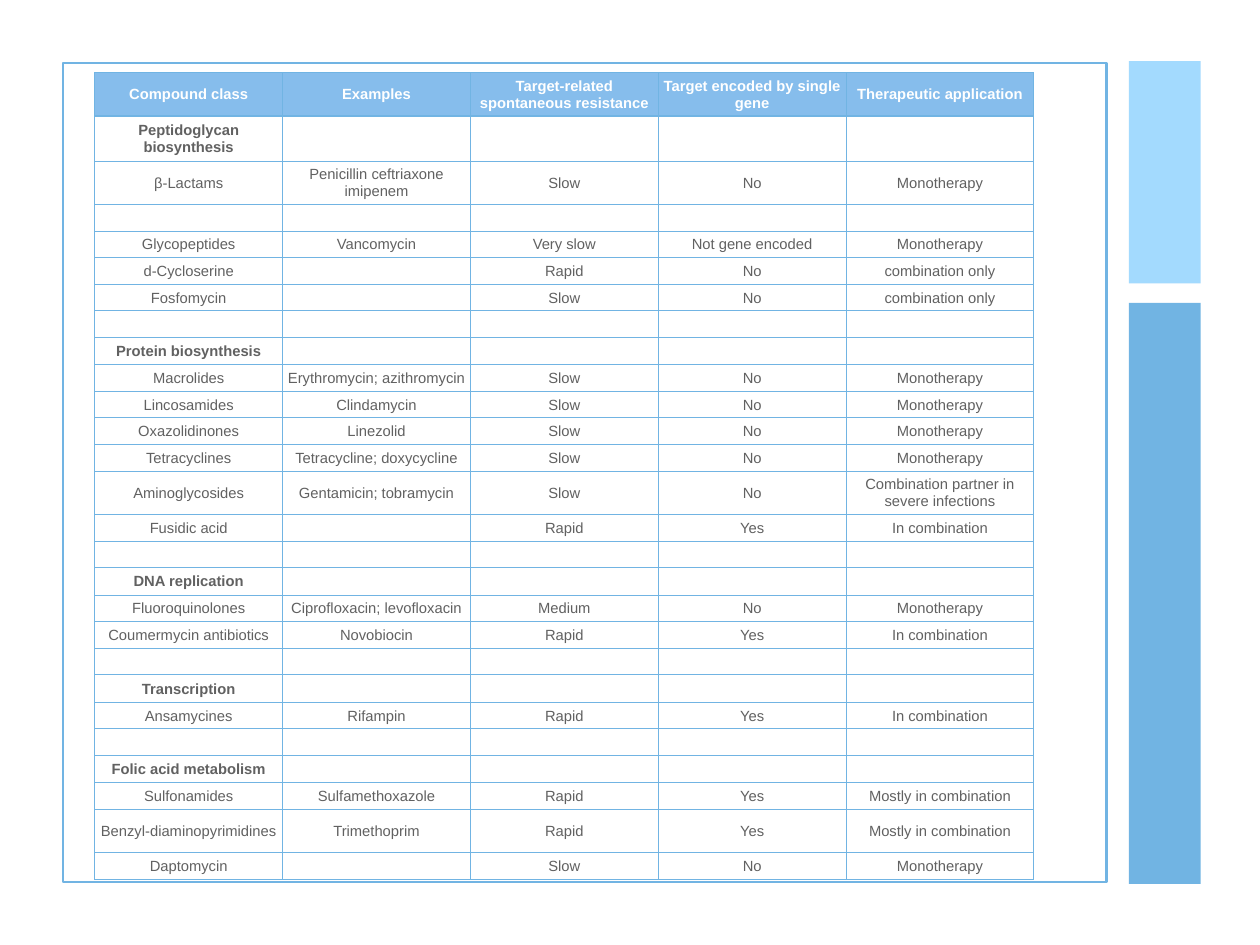
from dataclasses import dataclass

from lxml.etree import SubElement
from pptx import Presentation
from pptx.dml.color import RGBColor
from pptx.enum.shapes import MSO_SHAPE
from pptx.enum.text import MSO_ANCHOR, PP_ALIGN
from pptx.oxml.ns import qn
from pptx.util import Inches, Pt


@dataclass(frozen=True)
class Theme:
    font: str = "Arial"
    size: int = 12
    line_spacing: int = 14
    accent: str = "71B4E3"
    pale: str = "A3DAFE"
    header: str = "86BDEC"
    header_text: str = "FFFFFF"
    text: str = "616161"
    frame_width: int = 2
    border_width: int = 1


THEME = Theme()
COLUMN_WIDTH = 2.12
ROW_HEIGHT = 0.3
TITLE_HEIGHT = 0.31
TWO_LINE_HEIGHT = 0.49
TWO_LINE_TITLE_HEIGHT = 0.51

HEADINGS = ("Compound class", "Examples", "Target-related spontaneous resistance",
            "Target encoded by single gene", "Therapeutic application")
SPACER = ("",) * len(HEADINGS)
SECTIONS = {
    "Peptidoglycan biosynthesis": [
        ("β-Lactams", "Penicillin ceftriaxone imipenem", "Slow", "No", "Monotherapy"),
        SPACER,
        ("Glycopeptides", "Vancomycin", "Very slow", "Not gene encoded", "Monotherapy"),
        ("d-Cycloserine", "", "Rapid", "No", "combination only"),
        ("Fosfomycin", "", "Slow", "No", "combination only"),
    ],
    "Protein biosynthesis": [
        ("Macrolides", "Erythromycin; azithromycin", "Slow", "No", "Monotherapy"),
        ("Lincosamides", "Clindamycin", "Slow", "No", "Monotherapy"),
        ("Oxazolidinones", "Linezolid", "Slow", "No", "Monotherapy"),
        ("Tetracyclines", "Tetracycline; doxycycline", "Slow", "No", "Monotherapy"),
        ("Aminoglycosides", "Gentamicin; tobramycin", "Slow", "No",
         "Combination partner in severe infections"),
        ("Fusidic acid", "", "Rapid", "Yes", "In combination"),
    ],
    "DNA replication": [
        ("Fluoroquinolones", "Ciprofloxacin; levofloxacin", "Medium", "No", "Monotherapy"),
        ("Coumermycin antibiotics", "Novobiocin", "Rapid", "Yes", "In combination"),
    ],
    "Transcription": [
        ("Ansamycines", "Rifampin", "Rapid", "Yes", "In combination"),
    ],
    "Folic acid metabolism": [
        ("Sulfonamides", "Sulfamethoxazole", "Rapid", "Yes", "Mostly in combination"),
        ("Benzyl-diaminopyrimidines", "Trimethoprim", "Rapid", "Yes", "Mostly in combination"),
        ("Daptomycin", "", "Slow", "No", "Monotherapy"),
    ],
}
TWO_LINE_ROWS = {"Compound class", "β-Lactams", "Aminoglycosides", "Benzyl-diaminopyrimidines"}


def color(value):
    return RGBColor.from_string(value)


def write_text(frame, text, *, bold=False, text_color=THEME.text):
    para = frame.paragraphs[0]
    para.alignment = PP_ALIGN.CENTER
    para.line_spacing = Pt(THEME.line_spacing)
    if not text:
        SubElement(para._p, qn("a:endParaRPr"), sz=str(THEME.size * 100))
        return
    span = para.add_run()
    span.text = text
    span.font.name = THEME.font
    span.font.size = Pt(THEME.size)
    span.font.bold = bold
    span.font.color.rgb = color(text_color)


def draw_borders(cell):
    properties = cell._tc.get_or_add_tcPr()
    for index, side in enumerate(("a:lnL", "a:lnR", "a:lnT", "a:lnB")):
        line = SubElement(properties, qn(side), w=str(Pt(THEME.border_width)))
        fill = SubElement(line, qn("a:solidFill"))
        SubElement(fill, qn("a:srgbClr"), val=THEME.accent)
        properties.insert(index, line)


def format_cell(cell, text, *, header=False, title=False):
    inset = Inches(0.03 if header else 0.04)
    cell.margin_left = cell.margin_right = inset
    cell.margin_top = cell.margin_bottom = inset
    cell.vertical_anchor = MSO_ANCHOR.MIDDLE
    if header:
        cell.fill.solid()
        cell.fill.fore_color.rgb = color(THEME.header)
    else:
        cell.fill.background()
    draw_borders(cell)
    write_text(cell.text_frame, text, bold=header or title,
               text_color=THEME.header_text if header else THEME.text)


def table_rows():
    rows = [HEADINGS]
    for index, (title, compounds) in enumerate(SECTIONS.items()):
        if index:
            rows.append(SPACER)
        rows += [(title, *SPACER[1:]), *compounds]
    return rows


def row_height(name):
    if name in SECTIONS:
        return TWO_LINE_TITLE_HEIGHT if name == "Peptidoglycan biosynthesis" else TITLE_HEIGHT
    return TWO_LINE_HEIGHT if name in TWO_LINE_ROWS else ROW_HEIGHT


def add_rectangle(page, left, top, width, height, *, fill=None, line=None):
    box = page.shapes.add_shape(MSO_SHAPE.RECTANGLE, Inches(left), Inches(top),
                                Inches(width), Inches(height))
    box.shadow.inherit = False
    if fill:
        box.fill.solid()
        box.fill.fore_color.rgb = color(fill)
    else:
        box.fill.background()
    if line:
        box.line.color.rgb = color(line)
        box.line.width = Pt(THEME.frame_width)
    else:
        box.line.fill.background()


def add_side_bars(page, left, top, width, height):
    upper, gap = 2.51, 0.22
    lower_top = upper + gap
    add_rectangle(page, left, top + lower_top, width, height - lower_top, fill=THEME.accent)
    add_rectangle(page, left, top, width, upper, fill=THEME.pale)


def add_compound_table(page, left, top, width, height):
    add_rectangle(page, left, top, width, height, line=THEME.accent)
    rows = table_rows()
    heights = [row_height(row[0]) for row in rows]
    table = page.shapes.add_table(
        len(rows), len(HEADINGS), Inches(left + 0.36), Inches(top + 0.11),
        Inches(COLUMN_WIDTH * len(HEADINGS)), Inches(sum(heights))).table
    table.horz_banding = False
    for column in table.columns:
        column.width = Inches(COLUMN_WIDTH)
    for row_index, (texts, tall) in enumerate(zip(rows, heights)):
        table.rows[row_index].height = Inches(tall)
        for column_index, text in enumerate(texts):
            format_cell(table.cell(row_index, column_index), text,
                        header=row_index == 0, title=text in SECTIONS)


def main():
    deck = Presentation()
    deck.slide_width = Inches(14.22)
    deck.slide_height = Inches(10.67)
    page = deck.slides.add_slide(deck.slide_layouts[6])
    add_side_bars(page, 12.74, 0.69, 0.81, 9.29)
    add_compound_table(page, 0.71, 0.71, 11.78, 9.25)
    deck.save("out.pptx")


if __name__ == "__main__":
    main()
